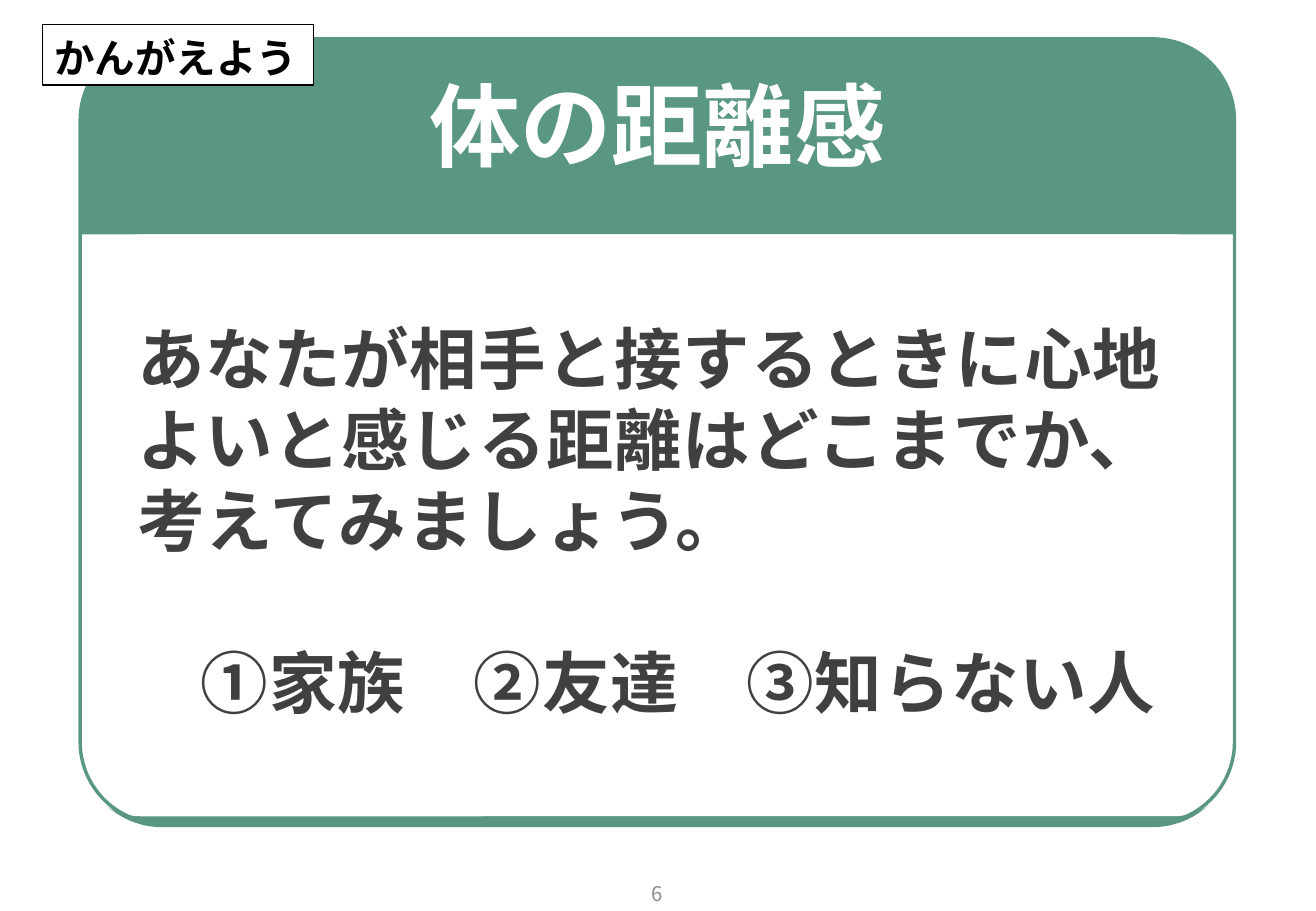
from dataclasses import dataclass

from lxml.etree import SubElement
from pptx import Presentation
from pptx.dml.color import RGBColor
from pptx.enum.shapes import MSO_SHAPE as Preset
from pptx.enum.text import MSO_ANCHOR as Anchor, PP_ALIGN as Align
from pptx.oxml.ns import qn
from pptx.shapes.autoshape import Shape
from pptx.slide import Slide
from pptx.util import Inches, Pt


@dataclass(frozen=True)
class Theme:
    font: str = "Noto Sans CJK JP"
    green: str = "5A9684"
    white: str = "FFFFFF"
    black: str = "000000"
    body: str = "404040"
    muted: str = "8C8C8C"
    title_size: int = 54
    body_size: int = 40
    label_size: int = 24
    number_size: int = 12
    leading: float = 1.2  # line pitch per point of type
    drop: float = 0.07  # top offset per point of type
    corner: float = 0.104


@dataclass(frozen=True)
class Panel:
    top: float
    height: float
    fill: str | None = None
    line: str | None = None
    line_width: float = 2
    left: float = 0.66
    width: float = 9.5
    rounded: bool = True


THEME = Theme()

CARD_HEAD = Panel(0.32, 6.49, fill=THEME.green)
CARD_BODY = Panel(1.93, 4.79, fill=THEME.white)
BODY_TOP = Panel(1.93, 1.17, fill=THEME.white, rounded=False)
CARD_OUTLINE = Panel(0.32, 6.46, line=THEME.green)
LABEL = Panel(0.2, 0.5, fill=THEME.white, line=THEME.black, line_width=0.75,
              left=0.35, width=2.23, rounded=False)

QUESTION = "あなたが相手と接するときに心地よいと感じる距離はどこまでか、考えてみましょう。"
CHOICES = "①家族　②友達　③知らない人"


def add_panel(page: Slide, panel: Panel) -> Shape:
    preset = Preset.ROUNDED_RECTANGLE if panel.rounded else Preset.RECTANGLE
    box = page.shapes.add_shape(preset, Inches(panel.left), Inches(panel.top),
                                Inches(panel.width), Inches(panel.height))
    box.shadow.inherit = False
    if panel.rounded:
        box.adjustments[0] = THEME.corner
    if panel.fill:
        box.fill.solid()
        box.fill.fore_color.rgb = RGBColor.from_string(panel.fill)
    else:
        box.fill.background()
    if panel.line:
        box.line.color.rgb = RGBColor.from_string(panel.line)
        box.line.width = Pt(panel.line_width)
    else:
        box.line.fill.background()
    return box


def add_text(box: Shape, text: str, *, size: int, color: str, bold: bool = True,
             align: Align = Align.LEFT, anchor: Anchor = Anchor.TOP,
             inset: float = 0.05, wrap: bool = True, spacing: float = 0,
             gap: float = 0) -> None:
    """Append one paragraph; gap is the space above it in points."""
    frame = box.text_frame
    frame.word_wrap = wrap
    frame.vertical_anchor = anchor
    frame.margin_top = Inches(inset) + Pt(THEME.drop * size)
    para = frame.add_paragraph() if frame.text else frame.paragraphs[0]
    para.alignment = align
    para.line_spacing = Pt(THEME.leading * size)
    para.space_before = Pt(gap)
    span = para.add_run()
    span.text = text
    span.font.name = THEME.font
    span.font.size = Pt(size)
    span.font.bold = bold
    span.font.color.rgb = RGBColor.from_string(color)
    properties = span.font._element
    SubElement(properties, qn("a:ea")).set("typeface", THEME.font)
    if spacing:
        properties.set("spc", str(round(spacing * 100)))


def add_text_box(page: Slide, left: float, top: float, width: float, height: float) -> Shape:
    return page.shapes.add_textbox(Inches(left), Inches(top), Inches(width), Inches(height))


def main() -> None:
    deck = Presentation()
    deck.slide_width, deck.slide_height = Inches(10.83), Inches(7.5)
    page = deck.slides.add_slide(deck.slide_layouts[6])

    # Page number
    number = add_text_box(page, 5.15, 7.21, 0.51, 0.28)
    add_text(number, "6", size=THEME.number_size, color=THEME.muted, bold=False,
             align=Align.CENTER, anchor=Anchor.MIDDLE)

    # Card with its title band
    head = add_panel(page, CARD_HEAD)
    add_text(head, "体の距離感", size=THEME.title_size, color=THEME.white,
             align=Align.CENTER, inset=0)
    for panel in (CARD_BODY, BODY_TOP, CARD_OUTLINE):
        add_panel(page, panel)

    # Question and choices, one line apart
    body = add_text_box(page, 1.03, 2.52, 9.11, 3.47)
    add_text(body, QUESTION, size=THEME.body_size, color=THEME.body, spacing=0.5)
    add_text(body, CHOICES, size=THEME.body_size, color=THEME.body, spacing=0.5,
             align=Align.CENTER, gap=THEME.leading * THEME.body_size)

    # Corner label
    label = add_panel(page, LABEL)
    add_text(label, "かんがえよう", size=THEME.label_size, color=THEME.black, wrap=False)

    deck.save("out.pptx")


if __name__ == "__main__":
    main()
